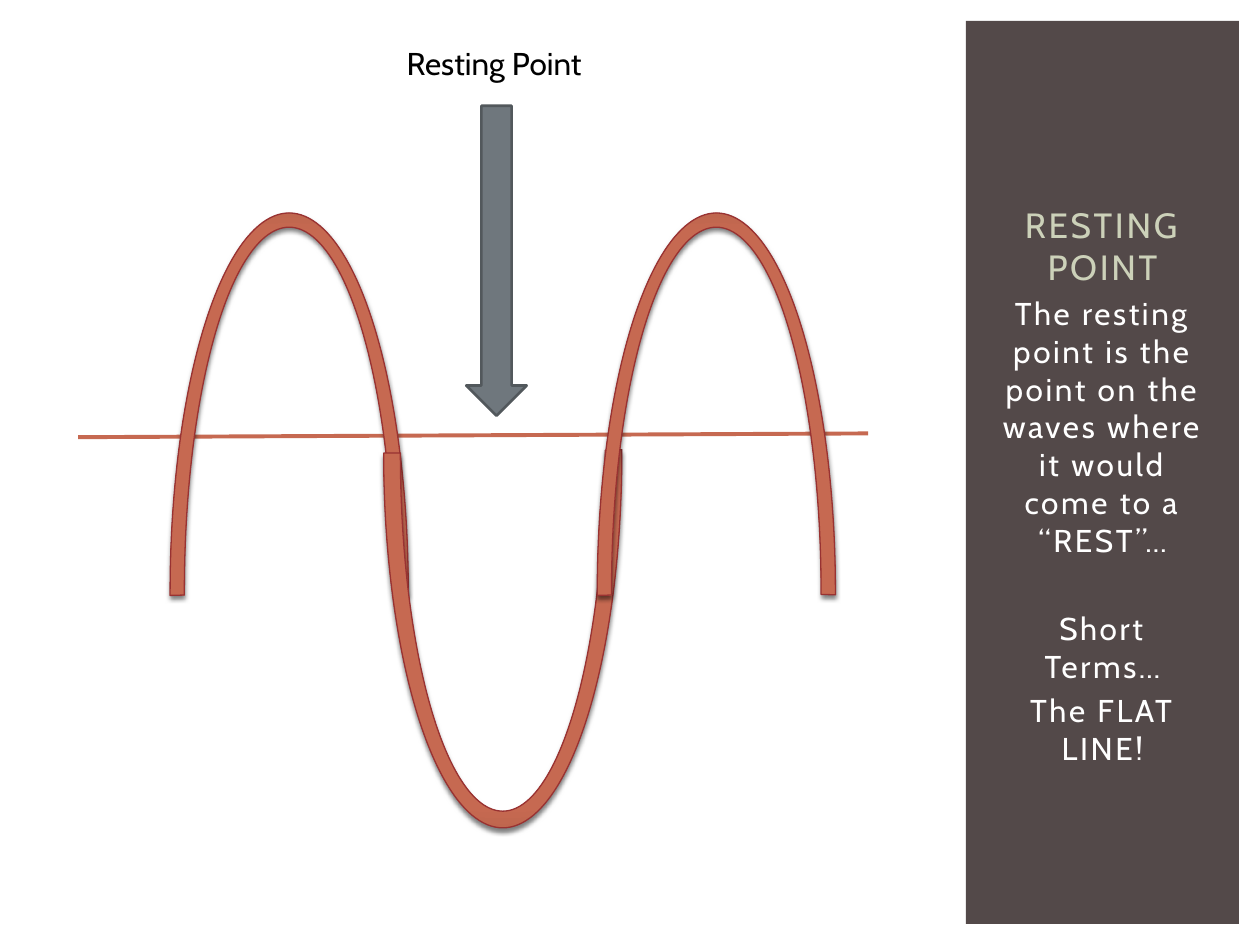
from pptx import Presentation
from pptx.dml.color import RGBColor
from pptx.enum.shapes import MSO_CONNECTOR, MSO_SHAPE
from pptx.enum.text import MSO_ANCHOR, MSO_AUTO_SIZE, PP_ALIGN
from pptx.oxml import parse_xml
from pptx.oxml.ns import nsdecls
from pptx.util import Inches, Pt

COLUMNS, ROWS = 60, 45


def color(value):
    return RGBColor.from_string(value)


class WaveSlide:
    font = "Cabin"
    dark, white, black = "534949", "FFFFFF", "000000"
    heading, wave, wave_edge, wave_line = "CCD1B9", "C66951", "B8624B", "993232"
    arrow_fill, arrow_line = "6F777D", "52585C"

    def __init__(self, presentation):
        self.cell_width = presentation.slide_width / COLUMNS
        self.cell_height = presentation.slide_height / ROWS
        self.slide = presentation.slides.add_slide(presentation.slide_layouts[5])
        self.shapes = self.slide.shapes
        background = self.slide.background.fill
        background.solid()
        background.fore_color.rgb = color(self.dark)

    def place(self, column, row, columns, rows):
        return (round(column * self.cell_width), round(row * self.cell_height),
                round(columns * self.cell_width), round(rows * self.cell_height))

    def shape(self, kind, box, fill, line=None, line_width=0, rotation=0):
        shape = self.shapes.add_shape(kind, *self.place(*box))
        shape.shadow.inherit = False
        shape.rotation = rotation
        shape.fill.solid()
        shape.fill.fore_color.rgb = color(fill)
        if line:
            shape.line.color.rgb = color(line)
            shape.line.width = Pt(line_width)
        else:
            shape.line.fill.background()
        return shape

    def arc(self, group, box, adjustments, rotation=0):
        arc = group.shapes.add_shape(MSO_SHAPE.BLOCK_ARC, *self.place(*box))
        arc.rotation = rotation
        for index, value in enumerate(adjustments):
            arc.adjustments[index] = value
        stops = "".join(
            f'<a:gs pos="{position}000"><a:srgbClr val="{value}"/></a:gs>'
            for position, value in ((0, self.wave), (90, self.wave), (100, self.wave_edge)))
        properties = arc._element.spPr
        properties.insert(2, parse_xml(
            f'<a:gradFill {nsdecls("a")} rotWithShape="1"><a:gsLst>{stops}</a:gsLst>'
            '<a:path path="circle"><a:fillToRect l="100000" t="100000" r="100000" b="100000"/>'
            '</a:path></a:gradFill>'))
        arc.line.color.rgb = color(self.wave_line)
        arc.line.width = Pt(0.75)
        properties.append(parse_xml(
            f'<a:effectLst {nsdecls("a")}><a:outerShdw blurRad="{Pt(2.5)}" dist="{Pt(2)}" '
            f'dir="5400000" rotWithShape="0"><a:srgbClr val="{self.black}">'
            '<a:alpha val="50000"/></a:srgbClr></a:outerShdw></a:effectLst>'))

    def line(self, group, start, end):
        start_x, start_y, end_x, end_y = self.place(*start, *end)
        line = group.shapes.add_connector(
            MSO_CONNECTOR.STRAIGHT, start_x, start_y, end_x, end_y)
        line.line.color.rgb = color(self.wave)
        line.line.width = Pt(2.25)
        line._element.spPr.append(parse_xml(f'<a:effectLst {nsdecls("a")}/>'))

    def set_text(self, shape, paragraphs, size, fill, spacing=0, align=PP_ALIGN.CENTER):
        frame = shape.text_frame
        frame.text = "\n".join(text for text, gap in paragraphs)
        for paragraph, (text, gap) in zip(frame.paragraphs, paragraphs):
            paragraph.alignment = align
            paragraph.space_before = Pt(gap)
            for run in paragraph.runs:
                run.font.name = self.font
                run.font.size = Pt(size)
                run.font.color.rgb = color(fill)
                if spacing:
                    run._r.get_or_add_rPr().set("spc", str(round(spacing * 100)))

    def title(self, text, box):
        title = self.shapes.title
        title.left, title.top, title.width, title.height = self.place(*box)
        self.set_text(title, [(text, 0)], 20, self.heading, spacing=1.5)
        title.text_frame.word_wrap = True
        title.text_frame.auto_size = MSO_AUTO_SIZE.NONE
        title.text_frame.vertical_anchor = MSO_ANCHOR.BOTTOM
        self.shapes._spTree.append(title._element)

    def body(self, paragraphs, box):
        body = self.shapes.add_textbox(*self.place(*box))
        body.text_frame.word_wrap = True
        body.text_frame.margin_top = 0
        self.set_text(body, paragraphs, 18, self.white, spacing=1.5)

    def label(self, text, box):
        label = self.shapes.add_textbox(*self.place(*box))
        label.text_frame.word_wrap = False
        label.text_frame.auto_size = MSO_AUTO_SIZE.SHAPE_TO_FIT_TEXT
        self.set_text(label, [(text, 0)], 18, self.black, align=PP_ALIGN.LEFT)


def main():
    presentation = Presentation()
    presentation.slide_width = Inches(10)
    presentation.slide_height = Inches(7.5)
    page = WaveSlide(presentation)

    page.shape(MSO_SHAPE.RECTANGLE, (0, 0, COLUMNS, ROWS), page.white)
    page.shape(MSO_SHAPE.RECTANGLE, (46, 1, 13, 43), page.dark)
    page.body([("The resting point is the point on the waves where it would "
                "come to a “REST”…", 3.6),
               ("Short Terms…", 29),
               ("The FLAT LINE!", 3.6)], (47, 14, 11, 19.5))
    page.title("RESTING POINT", (47, 3, 11, 11))

    wave = page.shapes.add_group_shape()
    page.line(wave, (3.72, 20.82), (41.34, 20.64))
    crest = (10.14, 36.12, (107.07, 0.74, 0.06), 0)
    trough = (3.72, 35.7, (107.07, 0, 0.07), 180)
    for index, (top, height, adjustments, rotation) in enumerate((crest, trough, crest)):
        page.arc(wave, (8.1 + 10.17 * index, top, 11.34, height), adjustments, rotation)

    page.shape(MSO_SHAPE.RIGHT_ARROW, (16.26, 10.98, 14.76, 2.88),
               page.arrow_fill, page.arrow_line, 1.5, rotation=90)
    page.label("Resting Point", (18.78, 1.8, 9.84, 2.4))

    presentation.save("out.pptx")


if __name__ == "__main__":
    main()
